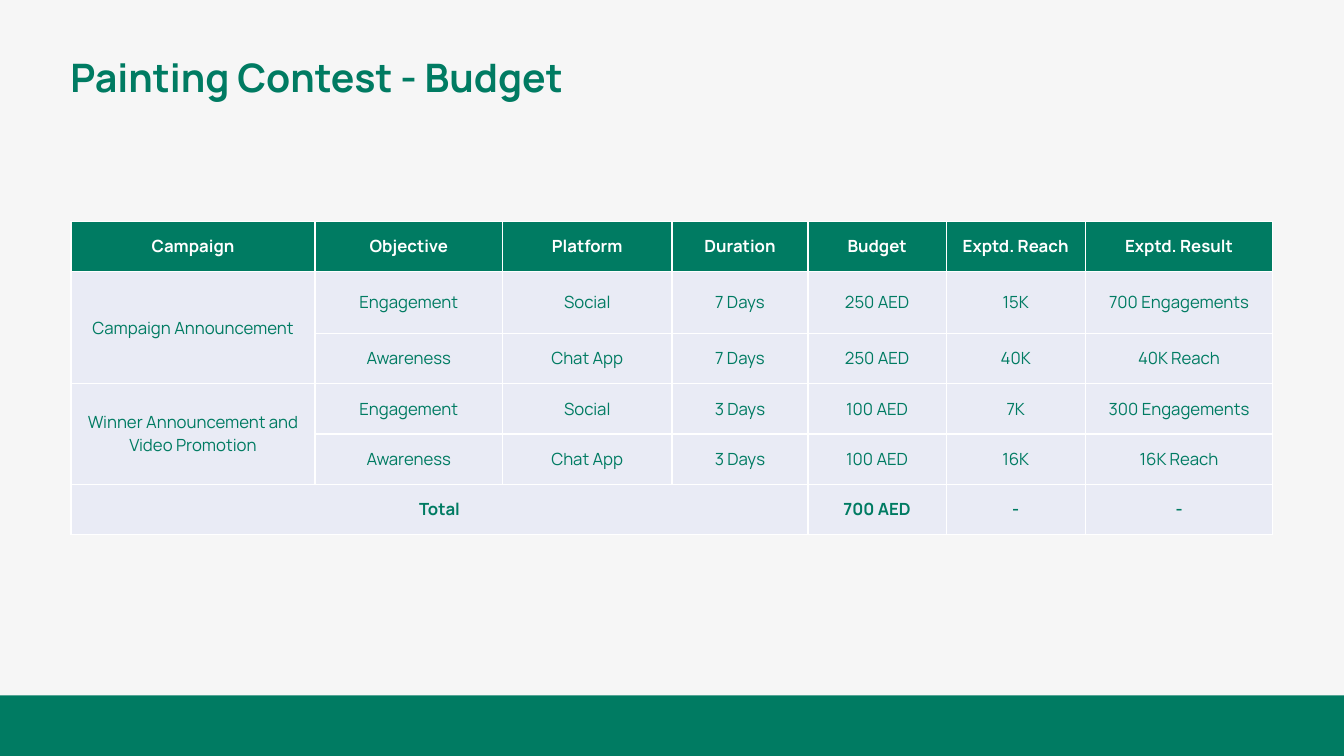
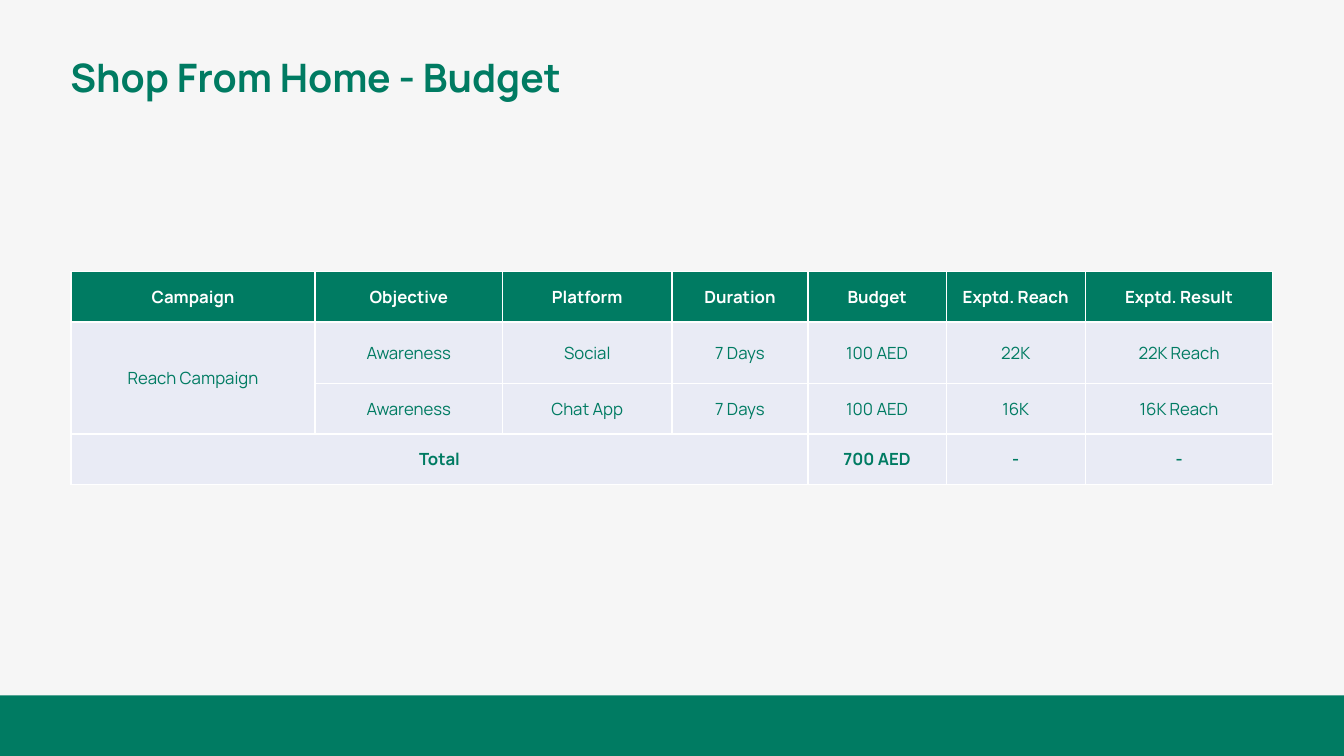
from lxml import etree
from pptx import Presentation
from pptx.dml.color import RGBColor
from pptx.enum.shapes import MSO_SHAPE
from pptx.enum.text import MSO_ANCHOR, MSO_AUTO_SIZE, PP_ALIGN
from pptx.oxml.ns import qn
from pptx.util import Inches, Pt

RECTANGLE = MSO_SHAPE.RECTANGLE
MIDDLE = MSO_ANCHOR.MIDDLE
FIT_SHAPE = MSO_AUTO_SIZE.SHAPE_TO_FIT_TEXT
LEFT, CENTER = PP_ALIGN.LEFT, PP_ALIGN.CENTER

COLORS = {"green": "007B62", "page": "F6F6F6", "cell": "E9EBF5", "white": "FFFFFF"}
FONT = "Manrope"
PAGE_WIDTH, PAGE_HEIGHT = 13.33, 7.5
BAND_HEIGHT = 0.6
COLUMN_WIDTHS = [2.42, 1.86, 1.68, 1.35, 1.37, 1.38, 1.86]
ROW_HEIGHT, FIRST_ROW_HEIGHT = 0.5, 0.61
TOTAL_SPAN = 4

HEADERS = ["Campaign", "Objective", "Platform", "Duration", "Budget", "Exptd. Reach", "Exptd. Result"]
TOTALS = ["Total", "", "", "", "700 AED", "-", "-"]

BUDGETS = [
    ("Painting Contest - Budget", [
        ("Campaign Announcement", [
            ["Engagement", "Social", "7 Days", "250 AED", "15K", "700 Engagements"],
            ["Awareness", "Chat App", "7 Days", "250 AED", "40K", "40K Reach"],
        ]),
        ("Winner Announcement and Video Promotion", [
            ["Engagement", "Social", "3 Days", "100 AED", "7K", "300 Engagements"],
            ["Awareness", "Chat App", "3 Days", "100 AED", "16K", "16K Reach"],
        ]),
    ]),
    ("Shop From Home - Budget", [
        ("Reach Campaign", [
            ["Awareness", "Social", "7 Days", "100 AED", "22K", "22K Reach"],
            ["Awareness", "Chat App", "7 Days", "100 AED", "16K", "16K Reach"],
        ]),
    ]),
]


def color(name):
    return RGBColor.from_string(COLORS[name])


def write(frame, text, size=12, ink="green", bold=False, align=CENTER):
    para = frame.paragraphs[0]
    para.alignment = align
    span = para.add_run()
    span.text = text
    span.font.name = FONT
    span.font.size = Pt(size)
    span.font.bold = bold
    span.font.color.rgb = color(ink)


def add_band(page, left, top, width, height):
    band = page.shapes.add_shape(RECTANGLE, Inches(left), Inches(top), Inches(width), Inches(height))
    band.shadow.inherit = False
    band.fill.solid()
    band.fill.fore_color.rgb = color("green")
    band.line.fill.background()


def add_title(page, text, left, top, width, height):
    box = page.shapes.add_textbox(Inches(left), Inches(top), Inches(width), Inches(height))
    box.text_frame.word_wrap = False
    box.text_frame.auto_size = FIT_SHAPE
    write(box.text_frame, text, size=28, bold=True, align=LEFT)


def style_cell(cell, fill):
    properties = cell._tc.get_or_add_tcPr()
    for side in ("a:lnL", "a:lnR", "a:lnT", "a:lnB"):
        border = etree.SubElement(properties, qn(side), w=str(Pt(1)))
        paint = etree.SubElement(border, qn("a:solidFill"))
        etree.SubElement(paint, qn("a:srgbClr"), val=COLORS["white"])
    cell.fill.solid()
    cell.fill.fore_color.rgb = color(fill)
    cell.vertical_anchor = MIDDLE


def add_budget_table(page, campaigns, center_x, center_y):
    rows = [HEADERS]
    merges = []
    for name, lines in campaigns:
        merges.append((len(rows), 0, len(rows) + len(lines) - 1, 0))
        rows += [[name if index == 0 else "", *line] for index, line in enumerate(lines)]
    last = len(rows)
    merges.append((last, 0, last, TOTAL_SPAN - 1))
    rows.append(TOTALS)

    heights = [FIRST_ROW_HEIGHT if index == 1 else ROW_HEIGHT for index in range(len(rows))]
    width, height = sum(COLUMN_WIDTHS), sum(heights)
    table = page.shapes.add_table(
        len(rows), len(COLUMN_WIDTHS),
        Inches(center_x - width / 2), Inches(center_y - height / 2),
        Inches(width), Inches(height),
    ).table
    table.first_row = False
    table.horz_banding = False
    for column, column_width in zip(table.columns, COLUMN_WIDTHS):
        column.width = Inches(column_width)
    for row, row_height in zip(table.rows, heights):
        row.height = Inches(row_height)

    for row_index, values in enumerate(rows):
        header = row_index == 0
        for column_index, value in enumerate(values):
            cell = table.cell(row_index, column_index)
            style_cell(cell, "green" if header else "cell")
            if value:
                write(cell.text_frame, value, ink="white" if header else "green",
                      bold=row_index in (0, last))
    for top, left, bottom, right in merges:
        table.cell(top, left).merge(table.cell(bottom, right))


def add_budget_page(deck, title, campaigns):
    page = deck.slides.add_slide(deck.slide_layouts[6])
    add_band(page, 0, PAGE_HEIGHT - BAND_HEIGHT, PAGE_WIDTH, BAND_HEIGHT)
    add_title(page, title, 0.6, 0.48, 5.45, 0.57)
    add_budget_table(page, campaigns, PAGE_WIDTH / 2, PAGE_HEIGHT / 2)


def main():
    deck = Presentation()
    deck.slide_width, deck.slide_height = Inches(PAGE_WIDTH), Inches(PAGE_HEIGHT)
    backdrop = deck.slide_master.background.fill
    backdrop.solid()
    backdrop.fore_color.rgb = color("page")
    for title, campaigns in BUDGETS:
        add_budget_page(deck, title, campaigns)
    deck.save("out.pptx")


if __name__ == "__main__":
    main()
